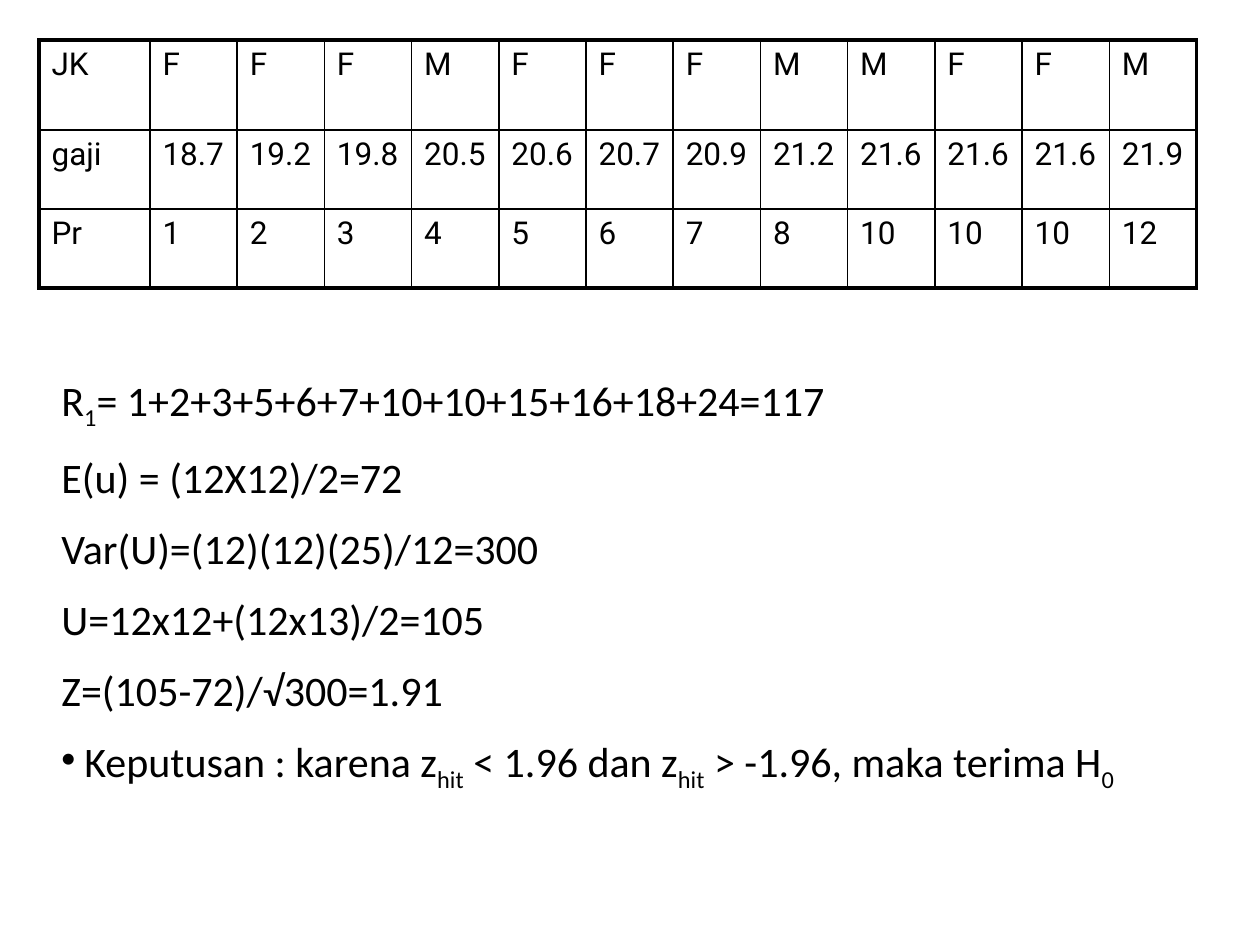
from lxml import etree
from pptx import Presentation
from pptx import util as u
from pptx.dml.color import RGBColor
from pptx.oxml import ns

PX = 914400 / 126
COLORS = {"ink": "000000"}
THIN, THICK = 1, 2.25
INDENT = 23

RANKS = [
    ["JK", *"FFFMFFFMMFFM"],
    ["gaji", "18.7", "19.2", "19.8", "20.5", "20.6", "20.7", "20.9",
     "21.2", "21.6", "21.6", "21.6", "21.9"],
    ["Pr", "1", "2", "3", "4", "5", "6", "7", "8", "10", "10", "10", "12"],
]

# Each line is a list of pieces: every second piece is a subscript.
WORKING = [
    ["R", "1", "= 1+2+3+5+6+7+10+10+15+16+18+24=117"],
    ["E(u) = (12X12)/2=72"],
    ["Var(U)=(12)(12)(25)/12=300"],
    ["U=12x12+(12x13)/2=105"],
    ["Z=(105-72)/√300=1.91"],
]
DECISION = ["Keputusan : karena z", "hit", " < 1.96 dan z", "hit",
            " > -1.96, maka terima H", "0"]


def px(length):
    return u.Emu(round(length * PX))


def set_font(paragraph, name, size):
    paragraph.font.name = name
    paragraph.font.size = u.Pt(size)
    paragraph.font.color.rgb = RGBColor.from_string(COLORS["ink"])


def set_borders(cell, widths):
    """Draw the left, right, top and bottom borders, with widths in points."""
    properties = cell._tc.get_or_add_tcPr()
    for position, (side, width) in enumerate(zip("LRTB", widths)):
        border = etree.Element(ns.qn(f"a:ln{side}"), w=str(u.Pt(width)))
        fill = etree.SubElement(border, ns.qn("a:solidFill"))
        etree.SubElement(fill, ns.qn("a:srgbClr"), val=COLORS["ink"])
        properties.insert(position, border)


def add_rank_table(slide, left, top, width, label_width, row_heights):
    last_row, last_column = len(RANKS) - 1, len(RANKS[0]) - 1
    table = slide.shapes.add_table(
        last_row + 1, last_column + 1,
        px(left), px(top), px(width), px(sum(row_heights))).table
    table.first_row = table.horz_banding = False
    for c, column in enumerate(table.columns):
        column.width = px((width - label_width) / last_column if c else label_width)
    for r, (values, height) in enumerate(zip(RANKS, row_heights)):
        table.rows[r].height = px(height)
        for c, value in enumerate(values):
            cell = table.cell(r, c)
            cell.text = value
            cell.fill.background()
            set_font(cell.text_frame.paragraphs[0], "Roboto", 18)
            on_edge = (c == 0, c == last_column, r == 0, r == last_row)
            set_borders(cell, [THICK if edge else THIN for edge in on_edge])


def add_working(slide, left, top, width, height):
    frame = slide.shapes.add_textbox(
        px(left), px(top), px(width), px(height)).text_frame
    frame.word_wrap = True
    for number, pieces in enumerate([*WORKING, DECISION]):
        line = frame.add_paragraph() if number else frame.paragraphs[0]
        set_font(line, "Calibri", 24)
        line.space_before = u.Pt(11.7)
        properties = line._p.get_or_add_pPr()
        properties.set("marL", str(px(INDENT)))
        properties.set("indent", str(-px(INDENT)))
        bullet = (etree.Element(ns.qn("a:buChar"), char="•")
                  if pieces is DECISION else etree.Element(ns.qn("a:buNone")))
        properties.find(ns.qn("a:spcBef")).addnext(bullet)
        for position, piece in enumerate(pieces):
            run = line.add_run()
            run.text = piece
            if position % 2:
                run.font._element.set("baseline", "-25000")


def main():
    deck = Presentation()
    deck.slide_width, deck.slide_height = px(1260), px(945)
    slide = deck.slides.add_slide(deck.slide_layouts[6])
    add_rank_table(slide, 39, 40, 1158, 111, [90, 79, 79])
    add_working(slide, 49, 368, 1152, 490)
    deck.save("out.pptx")


if __name__ == "__main__":
    main()
